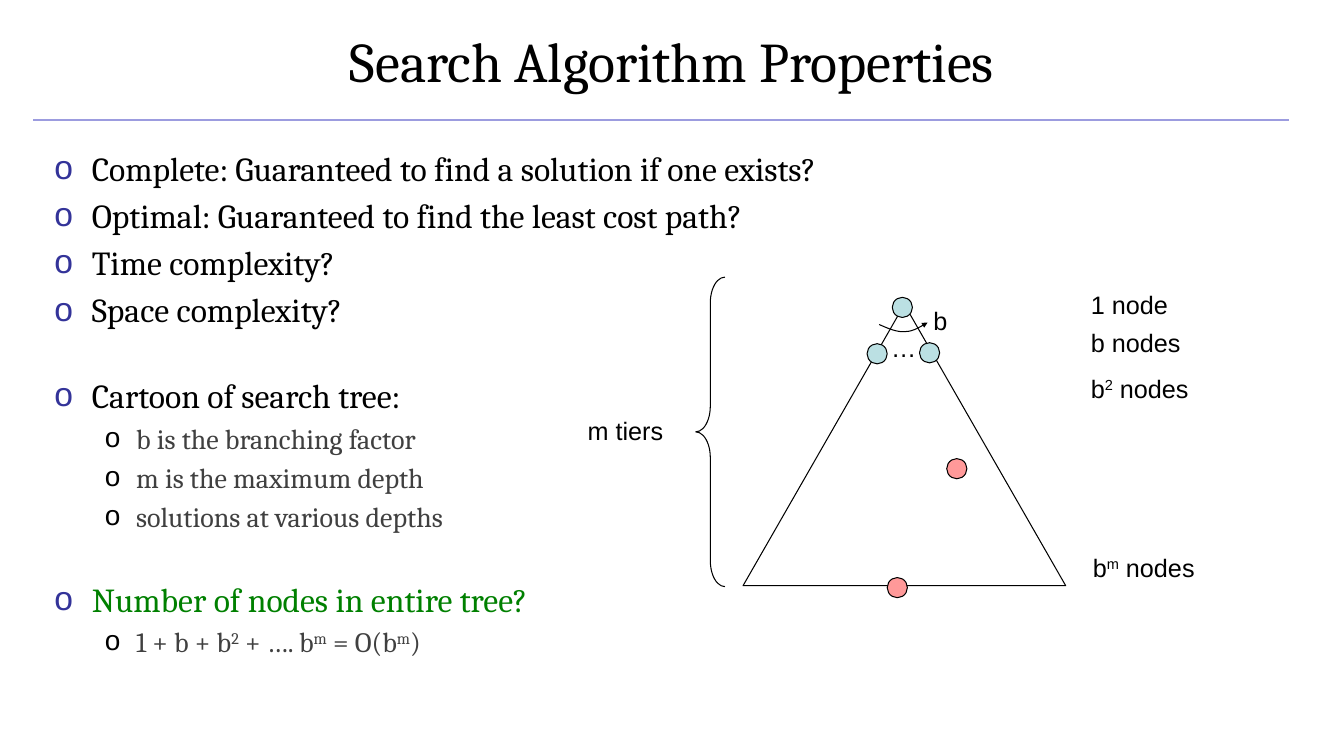
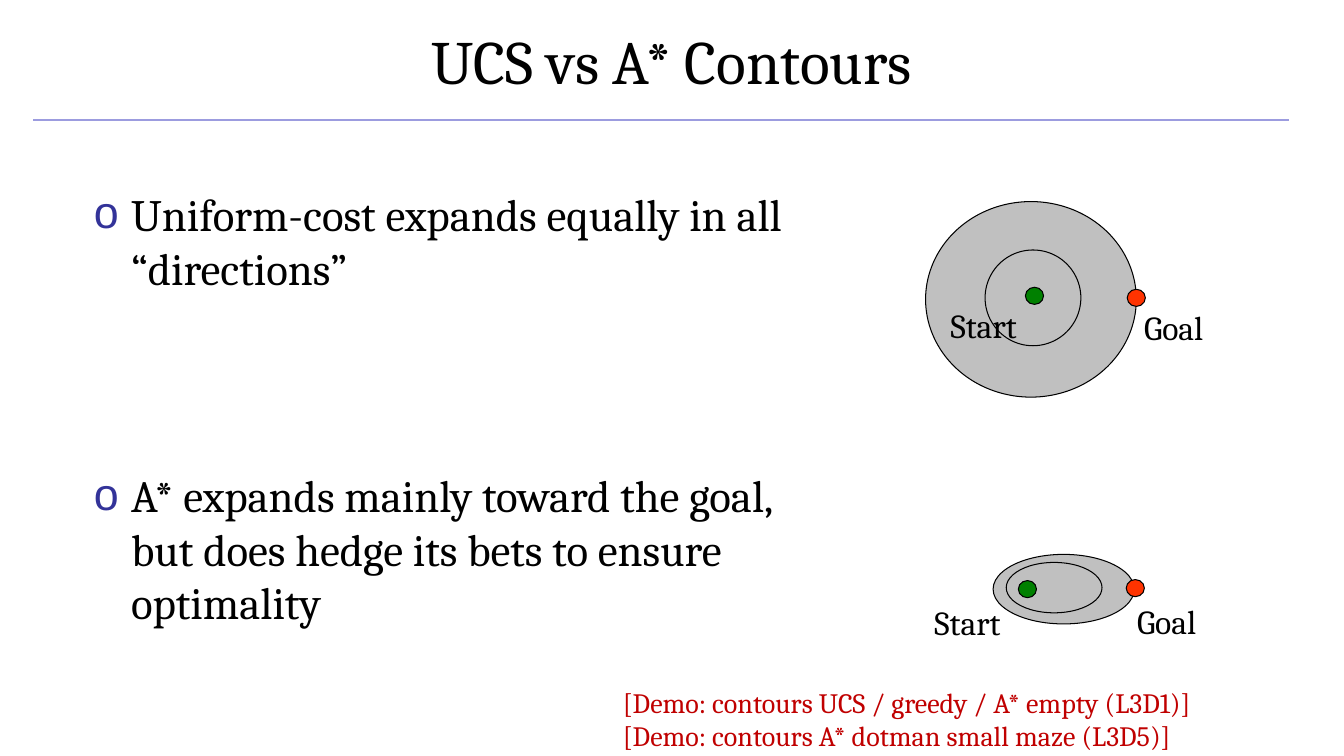
"""Build two lecture slides on search algorithm properties and A* contours."""
import pptx
import pptx.dml.color
import pptx.enum.shapes
import pptx.enum.text
import pptx.oxml
import pptx.oxml.ns
import pptx.util

Inches = pptx.util.Inches
Pt = pptx.util.Pt
PRESET = pptx.enum.shapes.MSO_SHAPE
ALIGN = pptx.enum.text.PP_ALIGN
qn = pptx.oxml.ns.qn

SERIF, SANS = "Cambria", "Arial"
BLACK, GRAY_TEXT, GREEN, DARK_RED = "000000", "404040", "008000", "C00000"
BULLET_BLUE, RULE_BLUE = "333399", "9C9CDF"
NODE_BLUE, SOLUTION_PINK = "BBE0E3", "FF9999"
CONTOUR_GRAY, GOAL_RED = "C0C0C0", "FF3300"
LEVELS = [
    {"margin": 0.37, "hanging": 0.37, "bullet": BULLET_BLUE},
    {"margin": 0.81, "hanging": 0.31, "bullet": BLACK},
]

PROPERTIES = [
    {"text": "Complete: Guaranteed to find a solution if one exists?"},
    {"text": "Optimal: Guaranteed to find the least cost path?"},
    {"text": "Time complexity?"},
    {"text": "Space complexity?"},
    {"text": "Cartoon of search tree:", "before": 32.5},
    {"text": "b is the branching factor", "level": 1},
    {"text": "m is the maximum depth", "level": 1},
    {"text": "solutions at various depths", "level": 1},
    {"text": "Number of nodes in entire tree?", "before": 32.5, "color": GREEN},
    {"text": "1 + b + b^2^ + …. b^m^ = O(b^m^)", "level": 1},
]
CONTOUR_POINTS = [
    {"text": "Uniform-cost expands equally in all “directions”"},
    {"text": "A* expands mainly toward the goal, but does hedge its bets to ensure optimality",
     "before": 124},
]
TREE_NODES = [
    (8.85, 2.95, NODE_BLUE), (8.6, 3.41, NODE_BLUE), (9.12, 3.4, NODE_BLUE),
    (8.8, 5.73, SOLUTION_PINK), (9.39, 4.55, SOLUTION_PINK),
]
TREE_LABELS = [
    ("…", 8.74, 3.25, 0.3), ("b", 9.16, 2.98, 0.33), ("1 node", 10.72, 2.82, 1.22),
    ("b nodes", 10.72, 3.2, 1.22), ("b^2^ nodes", 10.72, 3.65, 1.22),
    ("b^m^ nodes", 10.74, 5.43, 1.6), ("m tiers", 5.73, 4.07, 1.38),
]
BRANCH_ARC = [
    [(8.72, 3.22), (8.81, 3.26), (8.9, 3.3), (8.98, 3.29)],
    [(8.98, 3.29), (9.06, 3.29), (9.13, 3.24), (9.2, 3.2)],
]
CONTOURS = [
    {"outer": (9.18, 2, 2.09, 1.94), "inner": (9.77, 2.48, 0.95, 0.95),
     "start": (10.17, 2.85), "goal": (11.18, 2.87),
     "labels": [("Start", 9.33, 2.98), ("Goal", 11.25, 3)]},
    {"outer": (9.85, 5.5, 1.4, 0.69), "inner": (9.98, 5.58, 0.95, 0.5),
     "start": (10.1, 5.76), "goal": (11.17, 5.75),
     "labels": [("Start", 9.17, 5.92), ("Goal", 11.18, 5.91)]},
]
DEMOS = ["[Demo: contours UCS / greedy / A* empty (L3D1)]",
         "[Demo: contours A* dotman small maze (L3D5)]"]


def rgb(color):
    """Turn a hex string into a colour."""
    return pptx.dml.color.RGBColor.from_string(color)


def place(shape, left, top, width, height):
    """Set the position and size of a shape in inches."""
    shape.left, shape.top = Inches(left), Inches(top)
    shape.width, shape.height = Inches(width), Inches(height)


def write(paragraph, text, size=18, font=SANS, color=BLACK, align=ALIGN.LEFT, before=0):
    """Write text in a paragraph, raising the parts between carets."""
    paragraph.alignment = align
    paragraph.space_before = Pt(before)
    for index, part in enumerate(text.split("^")):
        if not part:
            continue
        run = paragraph.add_run()
        run.text = part
        run.font.size, run.font.name = Pt(size), font
        run.font.color.rgb = rgb(color)
        if index % 2:
            run.font._element.set("baseline", "30000")


def add_label(slide, lines, left, top, width, height, **text_format):
    """Add a text box with one paragraph for each line."""
    box = slide.shapes.add_textbox(*map(Inches, (left, top, width, height)))
    frame = box.text_frame
    frame.word_wrap = True
    for index, line in enumerate(lines):
        paragraph = frame.add_paragraph() if index else frame.paragraphs[0]
        write(paragraph, line, **text_format)


def style_shape(shape, fill=None):
    """Give a shape a thin black outline and a plain or empty fill."""
    shape.shadow.inherit = False
    shape.line.color.rgb = rgb(BLACK)
    shape.line.width = Pt(0.75)
    if fill:
        shape.fill.solid()
        shape.fill.fore_color.rgb = rgb(fill)
    else:
        shape.fill.background()


def add_figure(slide, preset, left, top, width, height, fill=None):
    """Add an outlined preset shape."""
    shape = slide.shapes.add_shape(preset, *map(Inches, (left, top, width, height)))
    style_shape(shape, fill)
    return shape


def set_bullet(paragraph, level):
    """Set the indent and the round bullet of a list level."""
    style = LEVELS[level]
    paragraph.level = level
    properties = paragraph._p.get_or_add_pPr()
    properties.set("marL", str(Inches(style["margin"])))
    properties.set("indent", str(-Inches(style["hanging"])))
    namespace = pptx.oxml.ns.nsdecls("a")
    for xml in (
        f'<a:buClr {namespace}><a:srgbClr val="{style["bullet"]}"/></a:buClr>',
        f'<a:buFont {namespace} typeface="{SANS}"/>',
        f'<a:buChar {namespace} char="o"/>',
    ):
        properties.append(pptx.oxml.parse_xml(xml))


def fill_list(body, items, sizes):
    """Fill the body placeholder with a bulleted list."""
    frame = body.text_frame
    frame.auto_size = pptx.enum.text.MSO_AUTO_SIZE.NONE
    for index, item in enumerate(items):
        paragraph = frame.add_paragraph() if index else frame.paragraphs[0]
        level = item.get("level", 0)
        size = sizes[level]
        set_bullet(paragraph, level)
        color = item.get("color", GRAY_TEXT if level else BLACK)
        before = item.get("before", 0.2 * size) if index else 0
        write(paragraph, item["text"], size=size, font=SERIF, color=color, before=before)


def add_layout_rule(slide):
    """Draw the rule below the title once, on the shared layout."""
    rule = slide.shapes.add_connector(
        pptx.enum.shapes.MSO_CONNECTOR.STRAIGHT,
        *map(Inches, (0.33, 1.19, 12.78, 1.19)))
    rule.line.color.rgb = rgb(RULE_BLUE)
    rule.line.width = Pt(1)
    properties = rule.element.spPr
    properties.append(properties.makeelement(qn("a:effectLst"), {}))
    rule.element.nvCxnSpPr.cNvPr.set("id", "20")
    slide.slide_layout.shapes.element.append(rule.element)


def add_slide(presentation, title, title_size, items, sizes, body_place):
    """Add a slide with its title and bulleted list."""
    slide = presentation.slides.add_slide(presentation.slide_layouts[1])
    frame = slide.shapes.title.text_frame
    frame.auto_size = pptx.enum.text.MSO_AUTO_SIZE.NONE
    frame.vertical_anchor = pptx.enum.text.MSO_ANCHOR.MIDDLE
    write(frame.paragraphs[0], title, size=title_size, font=SERIF, align=ALIGN.CENTER)
    body = slide.placeholders[1]
    place(body, *body_place)
    fill_list(body, items, sizes)
    return slide


def bezier_point(controls, t):
    """Return the point at t on a cubic curve, in EMU."""
    weights = ((1 - t) ** 3, 3 * t * (1 - t) ** 2, 3 * t ** 2 * (1 - t), t ** 3)
    return tuple(Inches(sum(weight * point[axis] for weight, point in zip(weights, controls)))
                 for axis in (0, 1))


def add_branch_arrow(slide, steps=8):
    """Draw the curved arrow across the branches."""
    points = [bezier_point(controls, step / steps)
              for controls in BRANCH_ARC for step in range(1, steps + 1)]
    builder = slide.shapes.build_freeform(*bezier_point(BRANCH_ARC[0], 0))
    builder.add_line_segments(points, close=False)
    arrow = builder.convert_to_shape()
    style_shape(arrow)
    outline = arrow.element.spPr.find(qn("a:ln"))
    head = {"type": "triangle", "w": "sm", "len": "sm"}
    outline.append(outline.makeelement(qn("a:tailEnd"), head))


def draw_search_tree(slide):
    """Draw the search tree with its nodes, brace and labels."""
    add_figure(slide, PRESET.ISOSCELES_TRIANGLE, 7.37, 3.02, 3.2, 2.79)
    for left, top, fill in TREE_NODES:
        add_figure(slide, PRESET.OVAL, left, top, 0.2, 0.2, fill)
    add_branch_arrow(slide)
    brace = add_figure(slide, PRESET.LEFT_BRACE, 6.9, 2.75, 0.29, 3.07)
    brace.adjustments[0] = 0.88
    for text, left, top, width in TREE_LABELS:
        add_label(slide, [text], left, top, width, 0.4)


def draw_contours(slide):
    """Draw both contour figures with their start and goal."""
    for contour in CONTOURS:
        add_figure(slide, PRESET.OVAL, *contour["outer"], fill=CONTOUR_GRAY)
        add_figure(slide, PRESET.OVAL, *contour["inner"])
        for point, fill in (("start", GREEN), ("goal", GOAL_RED)):
            add_figure(slide, PRESET.OVAL, *contour[point], 0.18, 0.17, fill)
        for text, left, top in contour["labels"]:
            add_label(slide, [text], left, top, 1, 0.5, size=24, font=SERIF)


def main():
    """Build and save the presentation."""
    presentation = pptx.Presentation()
    presentation.slide_width, presentation.slide_height = Inches(13.33), Inches(7.5)
    place(presentation.slide_layouts[1].placeholders[0], 0, -0.03, 13.33, 1.25)

    properties = add_slide(presentation, "Search Algorithm Properties", 40,
                           PROPERTIES, (24, 20), (0.44, 1.42, 12.44, 5.17))
    add_layout_rule(properties)
    draw_search_tree(properties)

    contours = add_slide(presentation, "UCS vs A* Contours", 44,
                         CONTOUR_POINTS, (32, 28), (0.83, 1.8, 7.33, 4.95))
    draw_contours(contours)
    add_label(contours, DEMOS, 6.08, 6.75, 7.25, 0.75, size=20, font=SERIF, color=DARK_RED)
    presentation.save("out.pptx")


if __name__ == "__main__":
    main()
